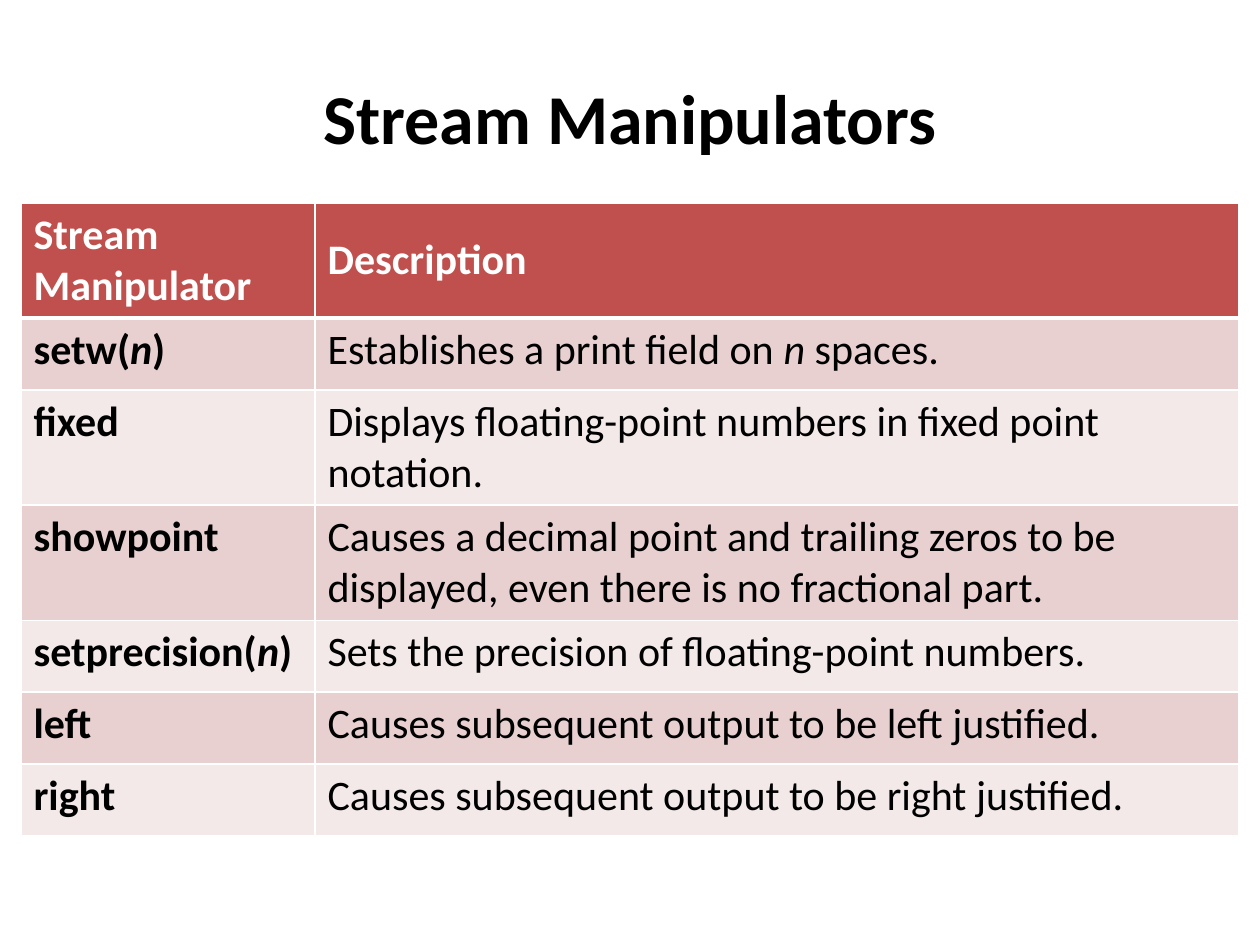
from pptx import Presentation
from pptx.dml.color import RGBColor
from pptx.enum.text import MSO_ANCHOR, PP_ALIGN
from pptx.oxml import parse_xml
from pptx.oxml.ns import nsdecls
from pptx.util import Pt

BLACK = RGBColor(0x00, 0x00, 0x00)
WHITE = RGBColor(0xFF, 0xFF, 0xFF)
RED = RGBColor(0xC0, 0x50, 0x4D)
ROSE = RGBColor(0xE8, 0xD0, 0xD0)
PALE = RGBColor(0xF4, 0xE9, 0xE9)

HEAD = ("Stream Manipulator", "Description")
ROWS = [
    ("setw(*n*)", "Establishes a print field on *n* spaces."),
    ("fixed", "Displays floating-point numbers in fixed point notation."),
    ("showpoint", "Causes a decimal point and trailing zeros to be displayed, "
                  "even there is no fractional part."),
    ("setprecision(*n*)", "Sets the precision of floating-point numbers."),
    ("left", "Causes subsequent output to be left justified."),
    ("right", "Causes subsequent output to be right justified."),
]


class Deck:
    face = "Calibri"

    def __init__(self, show):
        self.slide = show.slides.add_slide(show.slide_layouts[5])

    def text(self, frame, text, size, color, bold):
        para = frame.paragraphs[0]
        font = para.font
        font.name, font.size, font.bold = self.face, Pt(size), bold
        font.color.rgb = color
        for i, part in enumerate(text.split("*")):
            run = para.add_run()
            run.text = part
            if i % 2:
                run.font.italic = True
        return para

    def title(self, text, left, top, width, height):
        box = self.slide.shapes.title
        box.left, box.top = Pt(left), Pt(top)
        box.width, box.height = Pt(width), Pt(height)
        box.text_frame.vertical_anchor = MSO_ANCHOR.MIDDLE
        para = self.text(box.text_frame, text, 40, BLACK, True)
        para.alignment = PP_ALIGN.CENTER

    def edge(self, cell, side, width):
        cell._tc.get_or_add_tcPr().append(parse_xml(
            f'<a:{side} {nsdecls("a")} w="{Pt(width)}"><a:solidFill>'
            f'<a:srgbClr val="{WHITE}"/></a:solidFill></a:{side}>'))

    def cell(self, cell, text, fill, color, bold, top, base):
        for side, width in (("lnL", 1), ("lnR", 1), ("lnT", top), ("lnB", base)):
            self.edge(cell, side, width)
        cell.fill.solid()
        cell.fill.fore_color.rgb = fill
        self.text(cell.text_frame, text, 24, color, bold)

    def table(self, head, rows, left, top, widths, height):
        count = len(rows) + 1
        grid = self.slide.shapes.add_table(
            count, len(widths), Pt(left), Pt(top),
            Pt(sum(widths)), Pt(height * count)).table
        for col, width in zip(grid.columns, widths):
            col.width = Pt(width)
        for c, text in enumerate(head):
            self.cell(grid.cell(0, c), text, RED, WHITE, True, 1, 3)
        grid.cell(0, 1).vertical_anchor = MSO_ANCHOR.MIDDLE
        for r, row in enumerate(rows, 1):
            fill = ROSE if r % 2 else PALE
            for c, text in enumerate(row):
                self.cell(grid.cell(r, c), text, fill, BLACK, c == 0,
                          3 if r == 1 else 1, 1)


def main():
    show = Presentation()
    show.slide_width, show.slide_height = Pt(720), Pt(540)
    deck = Deck(show)
    deck.title("Stream Manipulators", 36, 21.6, 648, 90)
    deck.table(HEAD, ROWS, 12, 116, (168, 528), 41.1)
    show.save("out.pptx")


if __name__ == "__main__":
    main()
